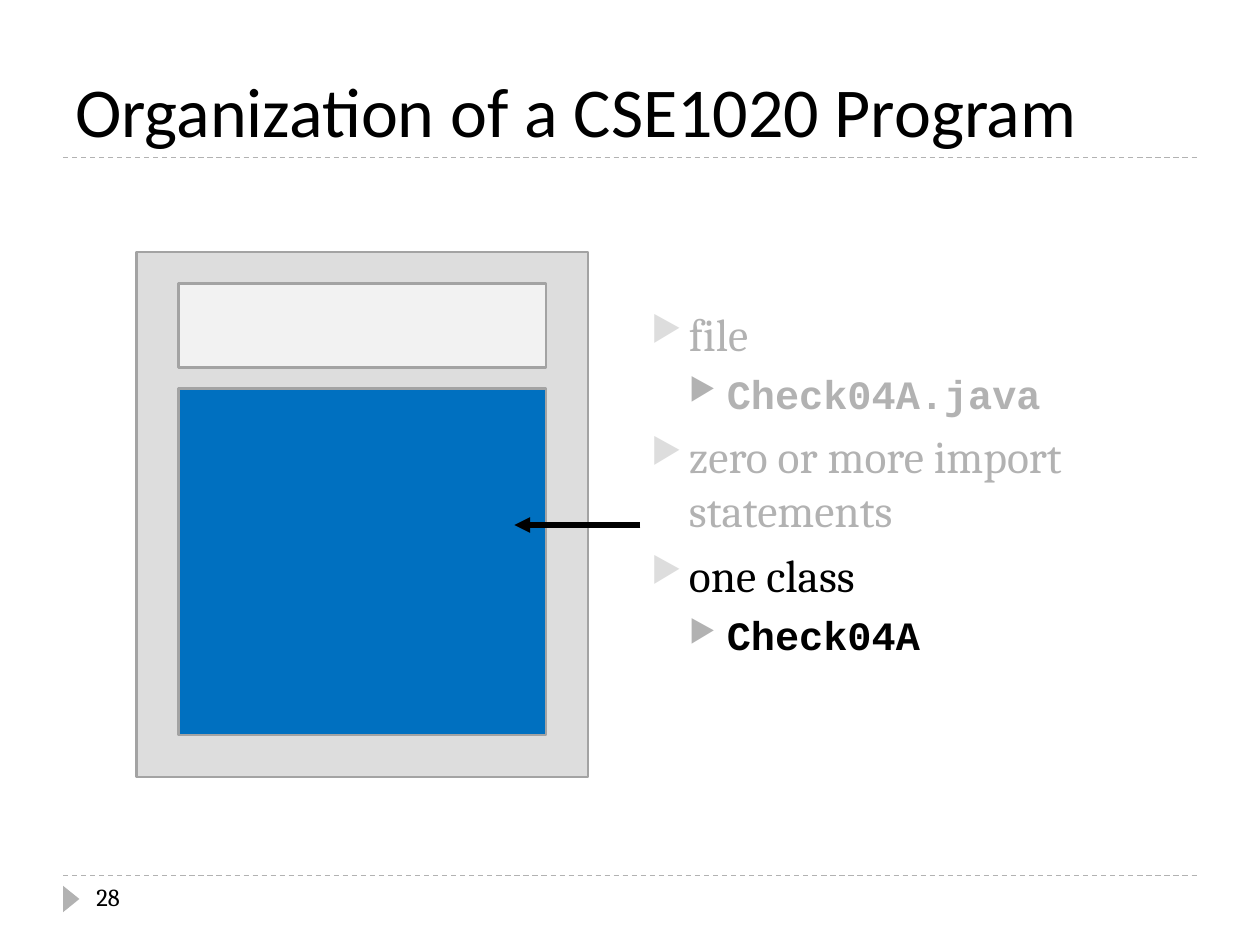
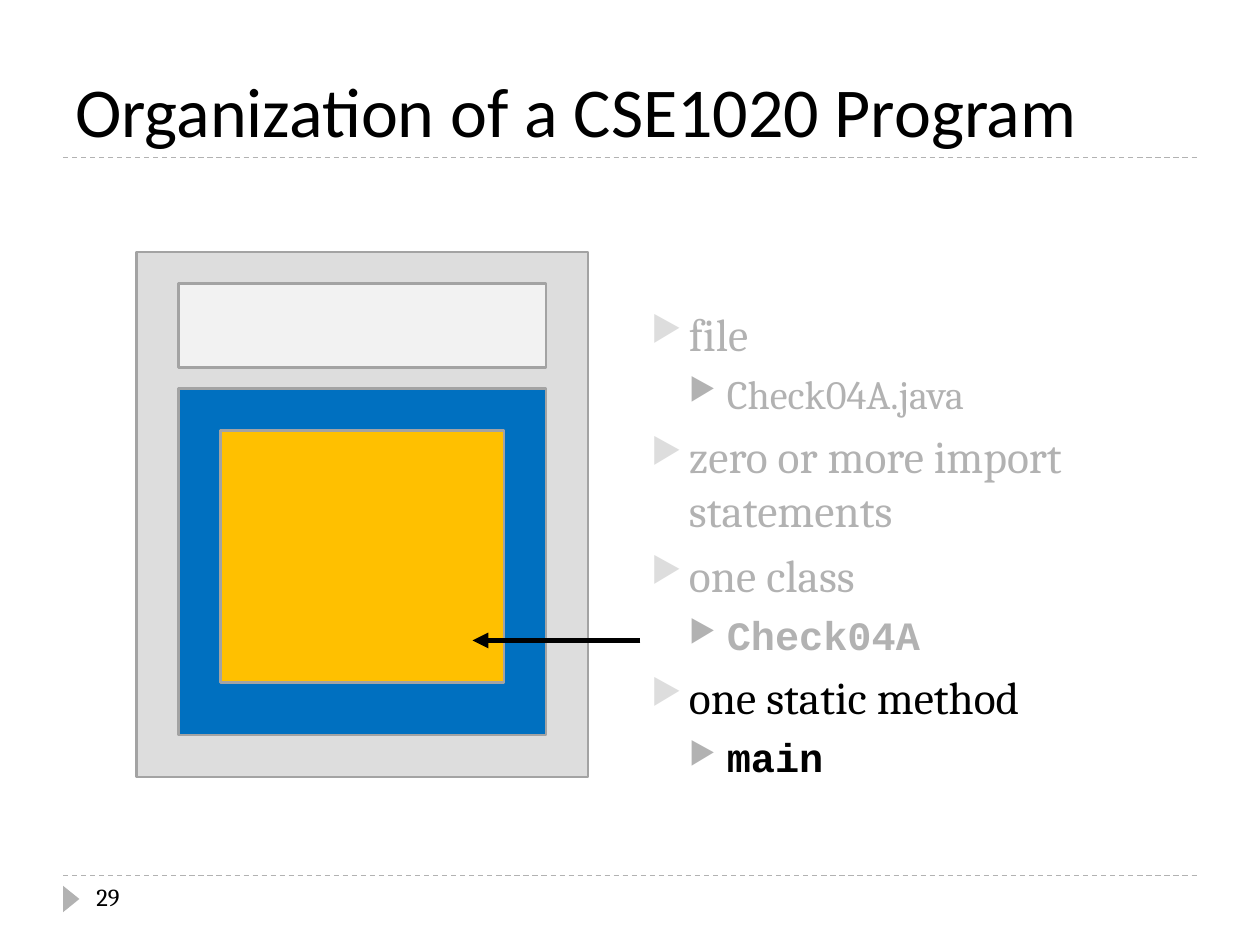
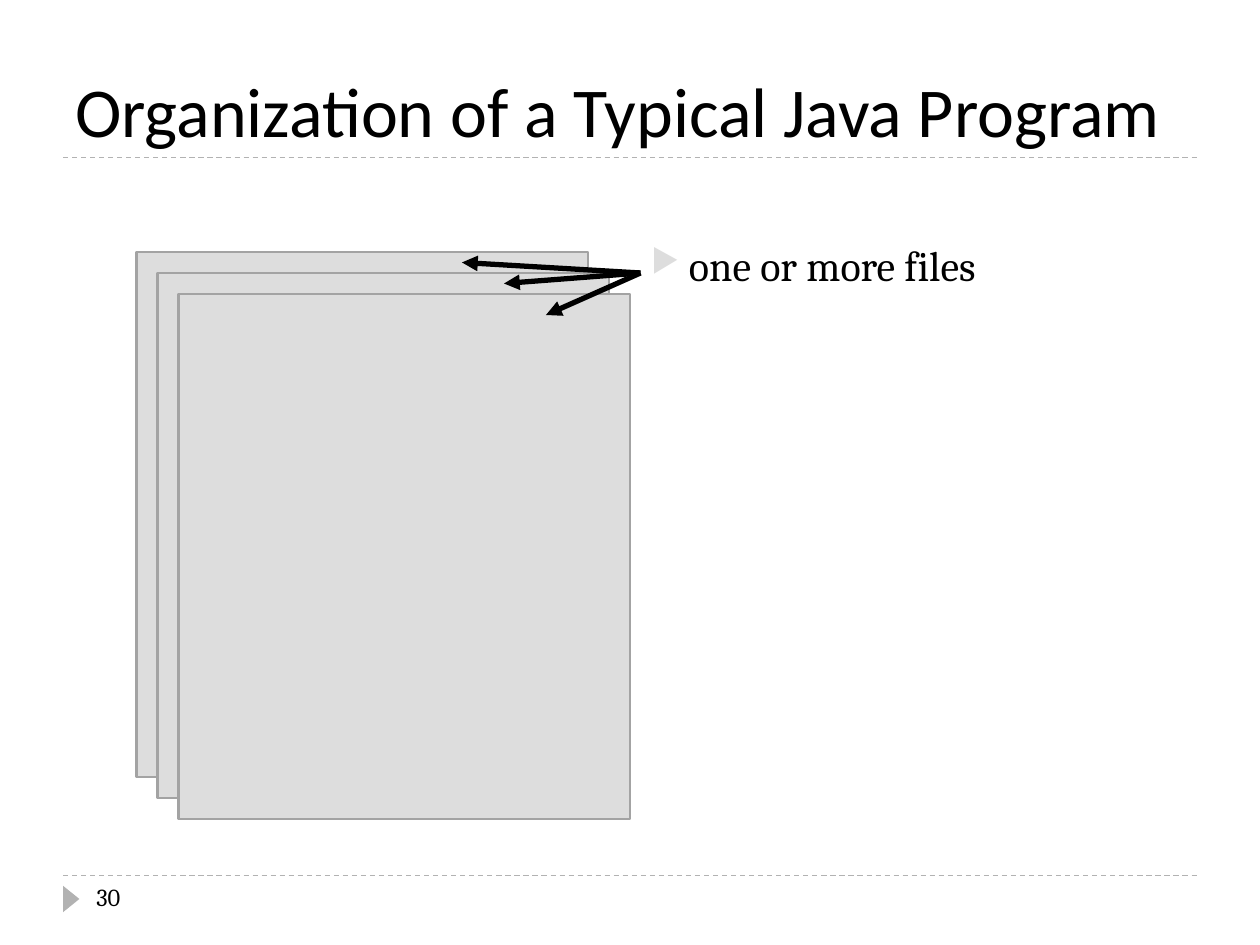
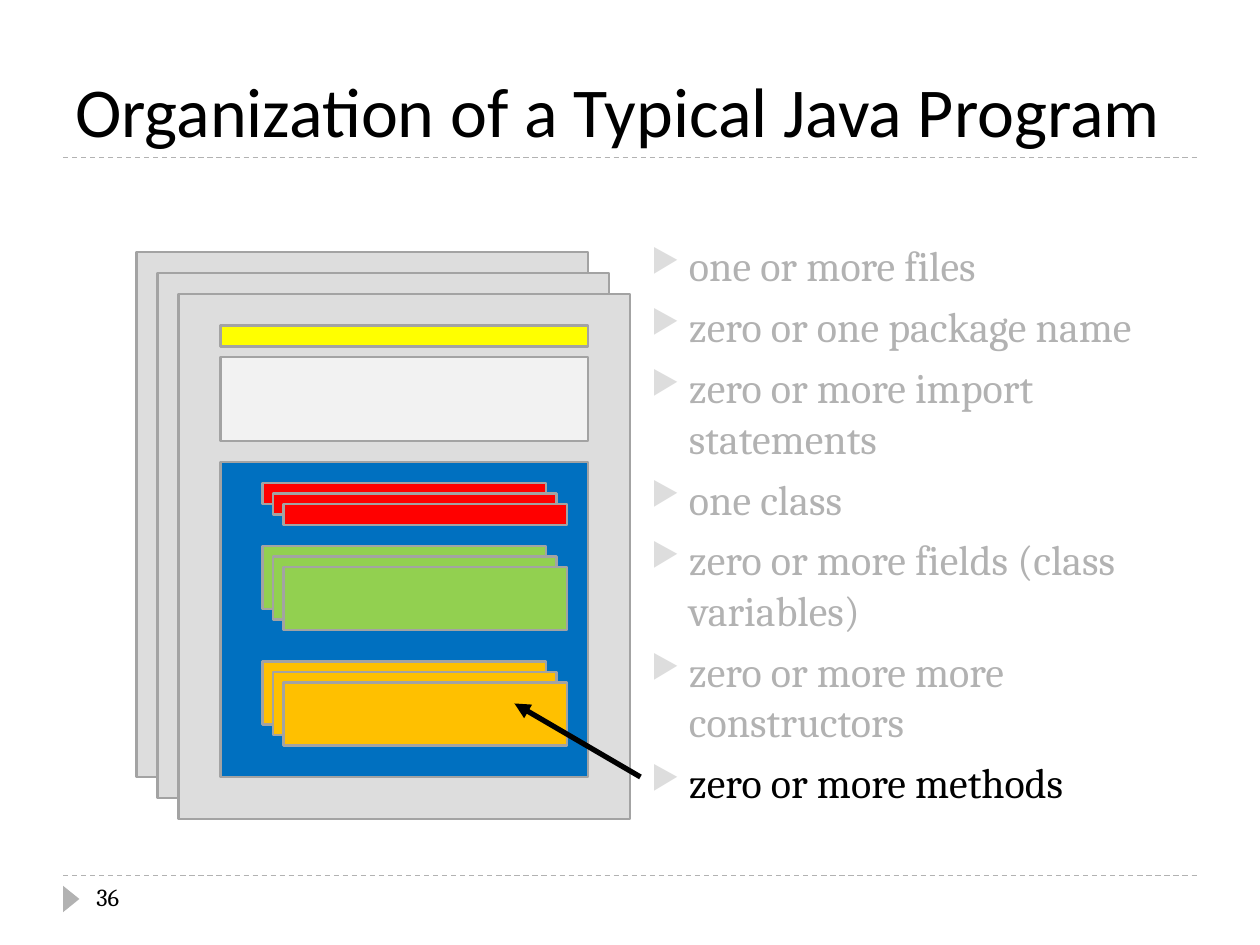
from lxml import etree
from pptx import Presentation
from pptx import util as u
from pptx.dml.color import RGBColor
from pptx.enum import dml, shapes, text
from pptx.oxml.ns import qn

COLS, ROWS = 120, 90
CELL = u.Inches(10) // COLS
BLACK, GREY, PALE, EDGE = "000000", "B2B2B2", "DDDDDD", "A3A3A3"
WHITE, BLUE, GOLD = "F2F2F2", "0070C0", "FFC000"
YELLOW, RED, GREEN = "FFFF00", "FF0000", "92D050"
HEAD, BODY, CODE = "Calibri", "Cambria", "Courier New"
CSE = "Organization of a CSE1020 Program"
JAVA = "Organization of a Typical Java Program"
BLANK_ROW = 6.25  # height of one unused line above the list


def rgb(code):
    return RGBColor.from_string(code)


def cells(*nums):
    return [u.Emu(round(n * CELL)) for n in nums]


def add(parent, tag, **attrs):
    return etree.SubElement(parent, qn(tag), attrs)


class Deck:
    """Holds the presentation, its style and the current slide."""

    def __init__(self):
        self.prs = Presentation()
        self.prs.slide_width, self.prs.slide_height = cells(COLS, ROWS)

    def page(self, title, num):
        """Start a slide with its rules, marker, title and page number."""
        self.slide = self.prs.slides.add_slide(self.prs.slide_layouts[6])
        for row in (83.4, 15):
            self.line((6, row), (114, row), GREY, 0.75, dash=True)
        mark = self.shape((5.52, 84.84, 2.52, 1.56), GREY,
                          kind=shapes.MSO_SHAPE.ISOSCELES_TRIANGLE)
        mark.rotation = 90
        self.label(title, (6, 3, 108, 12), HEAD, 40, text.MSO_ANCHOR.BOTTOM)
        self.label(str(num), (8, 83.4, 26, 4.8), BODY, 14)

    def shape(self, area, fill, edge=None, kind=shapes.MSO_SHAPE.RECTANGLE):
        item = self.slide.shapes.add_shape(kind, *cells(*area))
        item.shadow.inherit = False
        item.fill.solid()
        item.fill.fore_color.rgb = rgb(fill)
        if edge:
            item.line.color.rgb = rgb(edge)
            item.line.width = u.Pt(1.5)
        else:
            item.line.fill.background()
        return item

    def box(self, area, fill):
        self.shape(area, fill, EDGE)

    def stack(self, area, fill, step):
        """Draw three boxes, each moved down and right by step."""
        left, top, wide, high = area
        for i in range(3):
            self.box((left + i * step, top + i * step, wide, high), fill)

    def line(self, start, end, color, width, dash=False, arrow=False):
        item = self.slide.shapes.add_connector(
            shapes.MSO_CONNECTOR.STRAIGHT, *cells(*start, *end))
        item.line.color.rgb = rgb(color)
        item.line.width = u.Pt(width)
        if dash:
            item.line.dash_style = dml.MSO_LINE.DASH
        props = item.element.spPr
        if arrow:
            add(props.find(qn("a:ln")), "a:tailEnd", type="triangle")
        add(props, "a:effectLst")

    def arrow(self, start, end):
        self.line(start, end, BLACK, 3, arrow=True)

    def frame(self, area, anchor=text.MSO_ANCHOR.TOP):
        frame = self.slide.shapes.add_textbox(*cells(*area)).text_frame
        frame.word_wrap = True
        frame.vertical_anchor = anchor
        return frame

    def words(self, para, line, color, **style):
        run = para.add_run()
        run.text = line
        run.font.color.rgb = rgb(color)
        for key, value in style.items():
            setattr(run.font, key, value)

    def label(self, line, area, name, size, anchor=text.MSO_ANCHOR.TOP):
        para = self.frame(area, anchor).paragraphs[0]
        self.words(para, line, BLACK, name=name, size=u.Pt(size))

    def bullets(self, items, size, skip, live):
        """List (line, level, font) items; the last live ones are black."""
        frame = self.frame((60.84, 16, 53, 64.8))
        frame.margin_top = cells(0.6 + skip * BLANK_ROW)[0]
        for i, (line, level, name) in enumerate(items):
            para = frame.add_paragraph() if i else frame.paragraphs[0]
            para.level = level
            para.space_before = u.Pt(6 - level)
            self.indent(para, level)
            color = BLACK if i >= len(items) - live else GREY
            self.words(para, line, color, name=name, bold=name == CODE,
                       size=u.Pt(size - 3 * level))

    def indent(self, para, level):
        props = para._p.get_or_add_pPr()
        step = u.Inches(0.3)
        props.set("marL", str(step * (level + 1)))
        props.set("indent", str(-step))
        tint = add(props, "a:buClr")
        add(tint, "a:srgbClr", val=GREY if level else PALE)
        add(props, "a:buSzPct", val="76000")
        add(props, "a:buChar", char="▶")


def course(deck, num, items):
    """Show the single file with its imports and class."""
    deck.page(CSE, num)
    deck.bullets(items, 26, skip=2, live=2)
    deck.box((13, 24, 43, 50), PALE)
    deck.box((17, 27, 35, 8), WHITE)
    deck.box((17, 37, 35, 33), BLUE)


def typical(deck, num, lines):
    """Show the stack of files."""
    deck.page(JAVA, num)
    deck.bullets([(line, 0, BODY) for line in lines], 24, skip=1, live=1)
    deck.stack((13, 24, 43, 50), PALE, 2)


def parts(name):
    """List the file, with its name in the given font, and its parts."""
    return [("file", 0, BODY), ("Check04A.java", 1, name),
            ("zero or more import statements", 0, BODY),
            ("one class", 0, BODY), ("Check04A", 1, CODE)]


def main():
    deck = Deck()

    course(deck, 28, parts(CODE))
    deck.arrow((61, 50), (49, 50))

    course(deck, 29, parts(BODY) + [("one static method", 0, BODY),
                                    ("main", 1, CODE)])
    deck.box((21, 41, 27, 24), GOLD)
    deck.arrow((61, 61), (45, 61))

    typical(deck, 30, ["one or more files"])
    for tip in ((44, 25), (48, 27), (52, 30)):
        deck.arrow((61, 26), tip)

    typical(deck, 36, [
        "one or more files", "zero or one package name",
        "zero or more import statements", "one class",
        "zero or more fields (class variables)",
        "zero or more more constructors", "zero or more methods"])
    for top, high, fill in ((31, 2, YELLOW), (34, 8, WHITE), (44, 30, BLUE)):
        deck.box((21, top, 35, high), fill)
    for top, high, fill in ((46, 2, RED), (52, 6, GREEN), (63, 6, GOLD)):
        deck.stack((25, top, 27, high), fill, 1)
    deck.arrow((61, 74), (49, 67))

    deck.prs.save("out.pptx")


if __name__ == "__main__":
    main()
